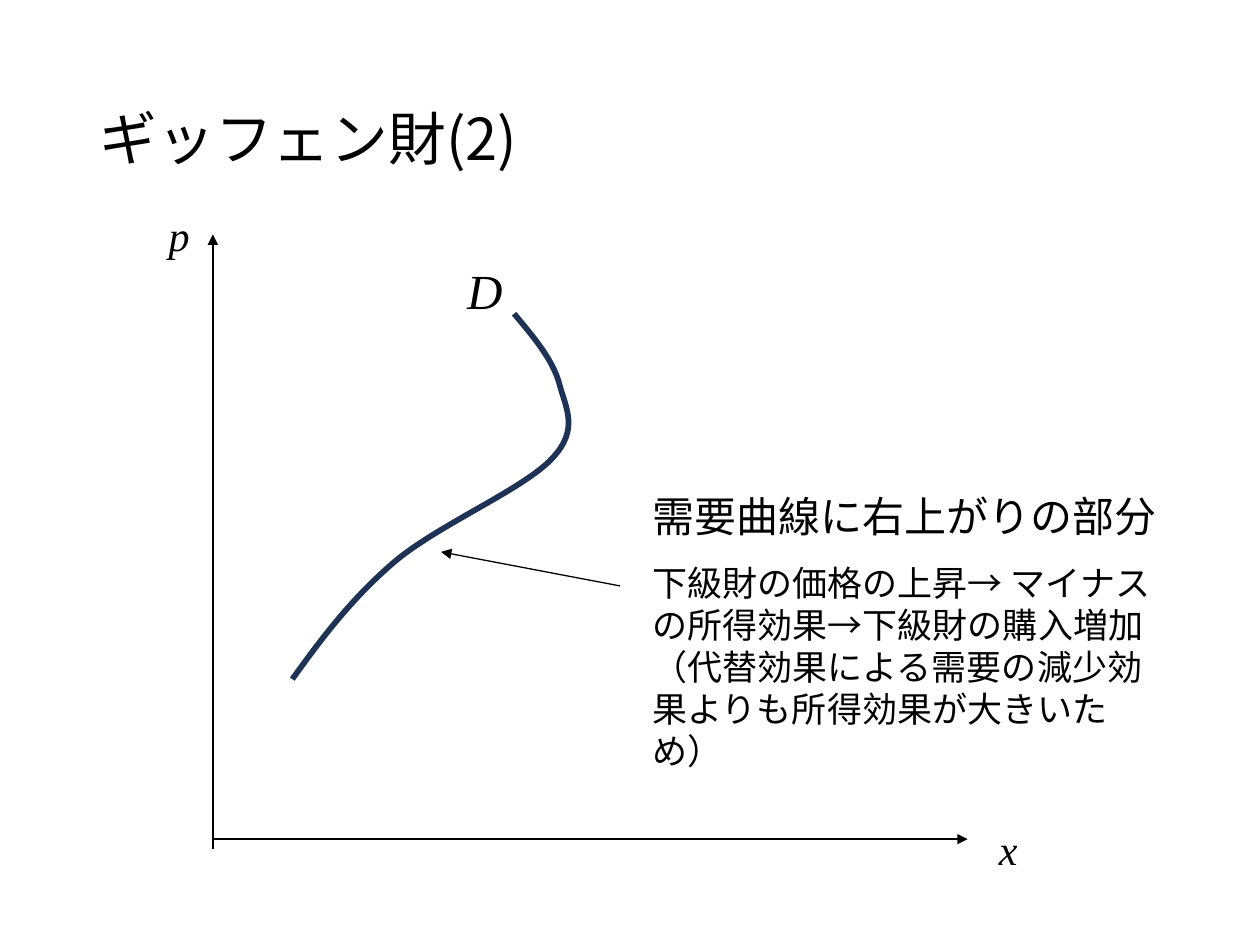
from lxml import etree
from pptx import Presentation
from pptx.dml.color import RGBColor
from pptx.enum.shapes import MSO_CONNECTOR as CONNECTOR
from pptx.enum.text import MSO_ANCHOR as ANCHOR, MSO_AUTO_SIZE as AUTO_SIZE, PP_ALIGN as ALIGN
from pptx.oxml.ns import qn
from pptx.util import Inches, Pt

SANS, SERIF = "Noto Sans CJK JP", "Times New Roman"


def color(value):
    return RGBColor.from_string(value)


def write(paragraph, text, font_name, size, italic=False):
    run = paragraph.add_run()
    run.text = text
    formats = {"name": font_name, "size": Pt(size), "italic": italic, "bold": False}
    for name, value in formats.items():
        setattr(run.font, name, value)
    run.font.color.rgb = color("000000")
    east_asian = etree.SubElement(run.font._element, qn("a:ea"))
    east_asian.set("typeface", font_name)
    paragraph.alignment = ALIGN.LEFT


presentation = Presentation()
presentation.slide_width, presentation.slide_height = Inches(10), Inches(7.5)
slide = presentation.slides.add_slide(presentation.slide_layouts[5])

title = slide.shapes.title
placement = {"left": 0.69, "top": 0.4, "width": 8.62, "height": 1.45}
for name, value in placement.items():
    setattr(title, name, Inches(value))
title.text_frame.auto_size = AUTO_SIZE.NONE
title.text_frame.vertical_anchor = ANCHOR.MIDDLE
title_paragraph = title.text_frame.paragraphs[0]
title_paragraph.line_spacing = 0.9
write(title_paragraph, "ギッフェン財(2)", SANS, 33)

arrows = [
    (1.69, 6.66, 7.68, 6.66, 1.25),
    (1.69, 6.74, 1.69, 1.86, 1.25),
    (4.92, 4.65, 3.5, 4.38, 0.75),
]
for *ends, width in arrows:
    arrow = slide.shapes.add_connector(CONNECTOR.STRAIGHT, *map(Inches, ends))
    arrow.line.color.rgb = color("000000")
    arrow.line.width = Pt(width)
    etree.SubElement(arrow.line._get_or_add_ln(), qn("a:tailEnd")).set("type", "triangle")
    etree.SubElement(arrow._element.spPr, qn("a:effectLst"))

explanation = [
    ("需要曲線に右上がりの部分", SANS, 24),
    ("下級財の価格の上昇→ マイナスの所得効果→下級財の購入増加"
     "（代替効果による需要の減少効果よりも所得効果が大きいため）", SANS, 20),
]
text_boxes = [
    ((1.24, 1.61, 0.39, 0.5), True, [("p", SERIF, 24, True)]),
    ((7.83, 6.49, 0.35, 0.5), False, [("x", SERIF, 24, True)]),
    ((3.61, 2.02, 0.55, 0.57), True, [("D", SERIF, 28, True)]),
    ((5.08, 3.84, 4.27, 2.36), True, explanation),
]
for box, wrap, lines in text_boxes:
    text_frame = slide.shapes.add_textbox(*map(Inches, box)).text_frame
    text_frame.word_wrap = wrap
    text_frame.auto_size = AUTO_SIZE.SHAPE_TO_FIT_TEXT
    for index, line in enumerate(lines):
        paragraph = text_frame.add_paragraph() if index else text_frame.paragraphs[0]
        paragraph.space_before = Pt(12 if index else 0)
        write(paragraph, *line)

start = (4.08, 2.49)
bezier_points = [
    (4.24, 2.68), (4.39, 2.86), (4.44, 3.05),
    (4.49, 3.24), (4.6, 3.41), (4.38, 3.64),
    (4.16, 3.88), (3.47, 4.17), (3.13, 4.46),
    (2.79, 4.75), (2.55, 5.07), (2.32, 5.39),
]
builder = slide.shapes.build_freeform(*map(Inches, start))
builder.add_line_segments([tuple(map(Inches, point)) for point in bezier_points], close=False)
demand_curve = builder.convert_to_shape()
curve_outline = next(demand_curve._element.iter(qn("a:path")))
segments = curve_outline.findall(qn("a:lnTo"))
for first in range(0, len(segments), 3):
    bezier = etree.SubElement(curve_outline, qn("a:cubicBezTo"))
    for segment in segments[first:first + 3]:
        bezier.append(segment[0])
        curve_outline.remove(segment)
demand_curve.width = Inches(2.19)
curve_outline.set("w", str(demand_curve.width))
demand_curve.fill.background()
demand_curve.line.color.rgb = color("1E3256")
demand_curve.line.width = Pt(3.25)
demand_curve.shadow.inherit = False

presentation.save("out.pptx")
